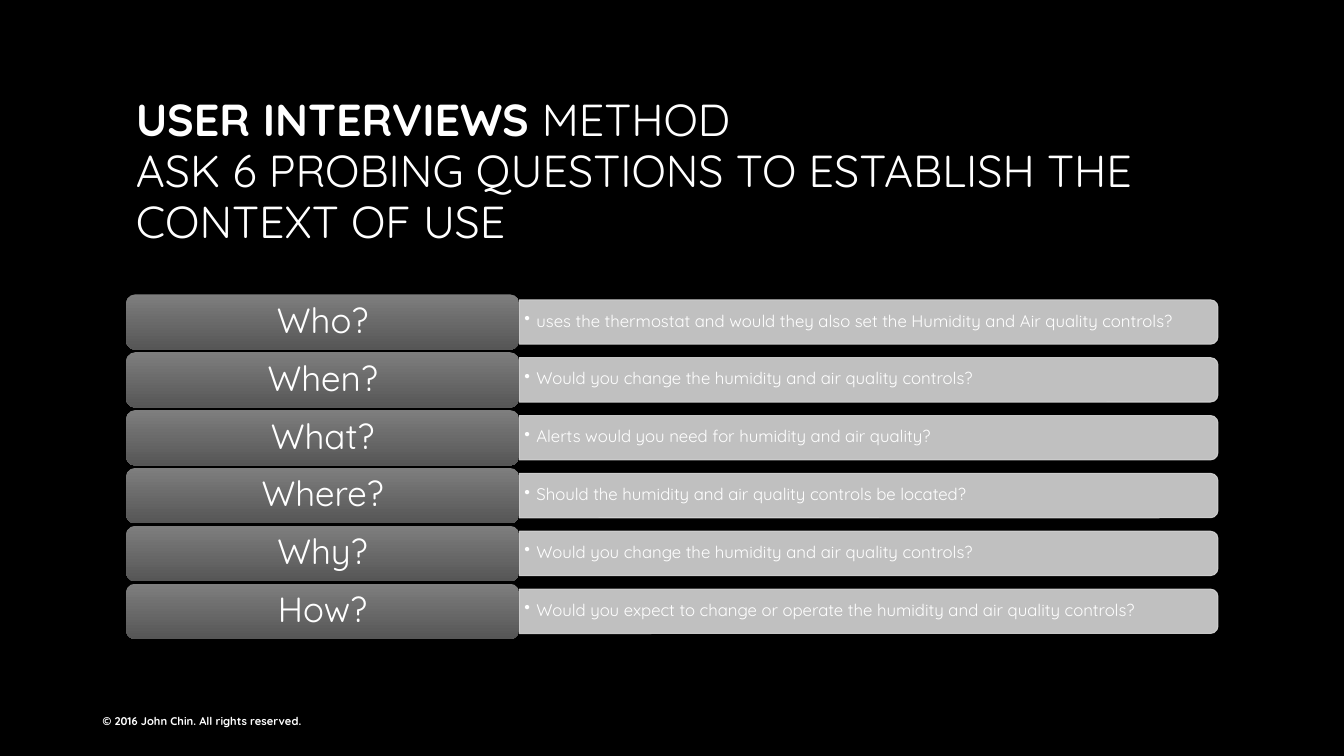
import pptx
import pptx.util
import pptx.dml.color
import pptx.enum.shapes
import pptx.enum.text
from lxml import etree

Inches = pptx.util.Inches
Pt = pptx.util.Pt
RGBColor = pptx.dml.color.RGBColor
SHAPE = pptx.enum.shapes.MSO_SHAPE
ALIGN = pptx.enum.text.PP_ALIGN
MIDDLE = pptx.enum.text.MSO_ANCHOR.MIDDLE

BLACK = RGBColor(0x00, 0x00, 0x00)
WHITE = RGBColor(0xFF, 0xFF, 0xFF)
SILVER = RGBColor(0xA6, 0xA6, 0xA6)
PALE = RGBColor(0xD5, 0xD5, 0xD5)
GREY = RGBColor(0x7E, 0x7E, 0x7E)
DARK = RGBColor(0x56, 0x56, 0x56)
FONT = "Quicksand"

ROWS = [
    ("Who?", "uses the thermostat and would they also set the Humidity and Air quality controls?"),
    ("When?", "Would you change the humidity and air quality controls?"),
    ("What?", "Alerts would you need for humidity and air quality?"),
    ("Where?", "Should the humidity and air quality controls be located?"),
    ("Why?", "Would you change the humidity and air quality controls?"),
    ("How?", "Would you expect to change or operate the humidity and air quality controls?"),
]


def shade(fill, first, last, angle):
    """Fill with a two-colour gradient; angle is clockwise."""
    fill.gradient()
    fill.gradient_angle = 360 - angle
    for stop, color, place in zip(fill.gradient_stops, (first, last), (0, 1)):
        stop.color.rgb = color
        stop.position = place


def write(para, text, size=12, bold=False, align=ALIGN.LEFT, space=None):
    """Add a run of text to a paragraph."""
    para.alignment = align
    if space:
        para.line_spacing = space
    run = para.add_run()
    run.text = text
    run.font.name = FONT
    run.font.size = Pt(size)
    run.font.bold = bold
    run.font.color.rgb = WHITE
    return run


def frame(shape, side=0.1, edge=0.05):
    """Prepare a shape for text and return its first paragraph."""
    area = shape.text_frame
    area.word_wrap = True
    area.vertical_anchor = MIDDLE
    area.margin_left = area.margin_right = Inches(side)
    area.margin_top = area.margin_bottom = Inches(edge)
    return area.paragraphs[0]


def box(slide, left, top, width, height):
    return slide.shapes.add_textbox(
        Inches(left), Inches(top), Inches(width), Inches(height))


def block(slide, kind, left, top, width, height):
    shape = slide.shapes.add_shape(
        kind, Inches(left), Inches(top), Inches(width), Inches(height))
    shape.shadow.inherit = False
    return shape


def bullet(para, indent):
    props = para._p.get_or_add_pPr()
    props.set("marL", str(Inches(indent)))
    props.set("indent", str(-Inches(indent)))
    mark = etree.SubElement(props, pptx.oxml.ns.qn("a:buChar"))
    mark.set("char", "•")


def fade(shape, percent):
    """Make the solid fill and line of a shape partly transparent."""
    for color in shape._element.spPr.iter(pptx.oxml.ns.qn("a:srgbClr")):
        alpha = etree.SubElement(color, pptx.oxml.ns.qn("a:alpha"))
        alpha.set("val", str(percent * 1000))


def title(slide, left, top, width, height):
    para = frame(box(slide, left, top, width, height))
    lead = write(para, "USER INTERVIEWS ", size=32, bold=True, space=0.95)
    shade(lead.font.fill, WHITE, SILVER, 93)
    write(para, "METHOD", size=32)
    para.add_line_break()
    write(para, "ASK 6 PROBING QUESTIONS TO ESTABLISH THE CONTEXT OF USE", size=32)


def row(slide, label, text, left, top, width, height):
    split = 3.9
    start, span, thick = left + split, width - split, 0.44

    # Answer bar: an upright shape turned so its round end faces right
    middle = top + height / 2
    bar = block(slide, SHAPE.ROUND_2_SAME_RECTANGLE,
                start + (span - thick) / 2, middle - span / 2, thick, span)
    bar.rotation = 90
    bar.fill.solid()
    bar.fill.fore_color.rgb = PALE
    bar.line.color.rgb = PALE
    bar.line.width = Pt(0.75)
    fade(bar, 90)

    # Question text
    note = box(slide, start, middle - 0.2, span - 0.02, 0.39)
    para = frame(note, side=0.05, edge=0.03)
    write(para, text, space=0.9)
    bullet(para, 0.12)

    # Label
    tab = block(slide, SHAPE.ROUNDED_RECTANGLE, left, top, split, height)
    shade(tab.fill, GREY, DARK, 90)
    tab.line.fill.background()
    write(frame(tab), label, size=25, align=ALIGN.CENTER, space=0.9)


def table(slide, left, top, width, height):
    tall = 0.55
    step = (height - tall) / (len(ROWS) - 1)
    for i, (label, text) in enumerate(ROWS):
        row(slide, label, text, left, top + i * step, width, tall)


def footer(slide, left, top, width, height):
    para = frame(box(slide, left, top, width, height))
    write(para, "© 2016 John Chin. All rights reserved.", size=8, bold=True)


def main():
    deck = pptx.Presentation()
    deck.slide_width = Inches(13.33)
    deck.slide_height = Inches(7.5)
    slide = deck.slides.add_slide(deck.slide_layouts[6])
    slide.background.fill.solid()
    slide.background.fill.fore_color.rgb = BLACK

    footer(slide, 0.92, 6.95, 3, 0.4)
    title(slide, 1.25, 0.67, 10.83, 2.08)
    table(slide, 1.25, 2.92, 10.83, 3.42)
    deck.save("out.pptx")


if __name__ == "__main__":
    main()
